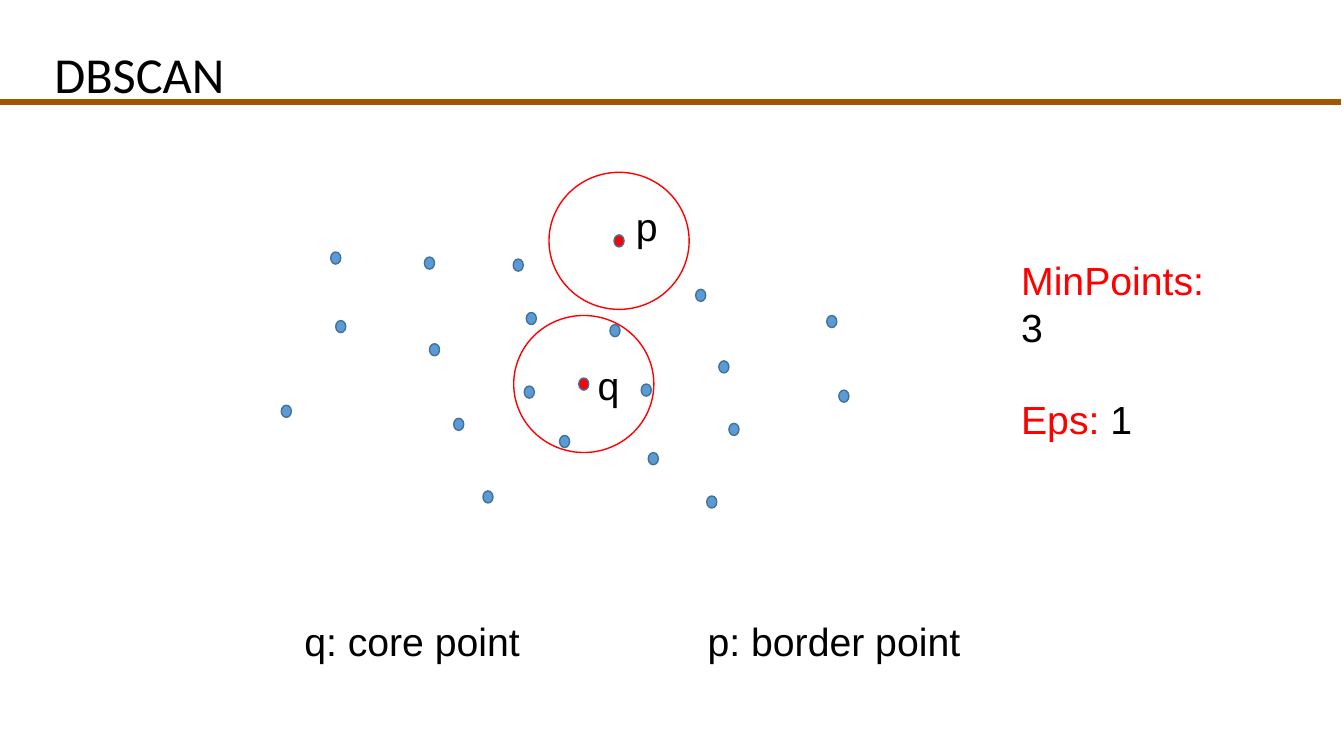
from pptx import Presentation
from pptx.dml.color import RGBColor
from pptx.enum.shapes import MSO_CONNECTOR as Link, MSO_SHAPE as Shape
from pptx.enum.text import MSO_ANCHOR as Anchor
from pptx.util import Inches, Pt
from lxml.etree import SubElement
from pptx.oxml.ns import qn


class Theme:
    ink, red, blue, edge, brown = "000000", "FF0000", "5B9BD5", "42719B", "9F5900"
    head_font, body_font = "Calibri", "Arial"
    head_size, body_size, gap = 36, 28, 32
    thin, thick = 1, 4.5


# Left and top of each point
POINTS = [
    (4.79, 4.87), (5.55, 4.32), (4.26, 3.41), (6.9, 2.87), (5.09, 2.57),
    (3.33, 3.18), (6.36, 3.81), (7.01, 4.92), (7.23, 4.2), (6.43, 4.49),
    (5.2, 3.83), (7.13, 3.58), (8.32, 3.87), (8.2, 3.13), (4.21, 2.55),
    (6.05, 3.22), (2.79, 4.02), (4.5, 4.15), (5.22, 3.1), (3.28, 2.5),
]
# Name, left and top of the point, left and top of its label
CENTERS = [("q", (5.74, 3.75), (5.83, 3.54)), ("p", (6.09, 2.33), (6.21, 1.96))]
DOT = (0.1, 0.12)
RING = (1.39, 1.36)

TITLE = [[("DBSCAN", Theme.ink)]]
PARAMS = [
    [("MinPoints: ", Theme.red), ("3", Theme.ink)],
    [("Eps: ", Theme.red), ("1", Theme.ink)],
]
LEGEND = [[("q: core point \tp: border point", Theme.ink)]]
LEGEND_TAB = 4


def color(code):
    return RGBColor.from_string(code)


def oval(slide, spot, size, line, fill=None):
    shape = slide.shapes.add_shape(Shape.FLOWCHART_CONNECTOR,
                                   *map(Inches, spot + size))
    shape.shadow.inherit = False
    if fill:
        shape.fill.solid()
        shape.fill.fore_color.rgb = color(fill)
    else:
        shape.fill.background()
    shape.line.color.rgb = color(line)
    shape.line.width = Pt(Theme.thin)


def text(slide, box, lines, font=Theme.body_font, size=Theme.body_size,
         pad=0.05, anchor=Anchor.TOP):
    frame = slide.shapes.add_textbox(*map(Inches, box)).text_frame
    frame.word_wrap = True
    frame.vertical_anchor = anchor
    frame.margin_left = frame.margin_right = Inches(0.1)
    frame.margin_top = frame.margin_bottom = Inches(pad)
    for i, runs in enumerate(lines):
        para = frame.add_paragraph() if i else frame.paragraphs[0]
        if i:
            para.space_before = Pt(Theme.gap)
        for words, ink in runs:
            run = para.add_run()
            run.text = words
            run.font.name = font
            run.font.size = Pt(size)
            run.font.color.rgb = color(ink)
    return frame


def set_tab(para, place):
    tabs = SubElement(para._p.get_or_add_pPr(), qn("a:tabLst"))
    SubElement(tabs, qn("a:tab"), pos=str(Inches(place)), algn="l")


def rule(slide, left, right, top):
    line = slide.shapes.add_connector(
        Link.STRAIGHT, *map(Inches, (left, top, right, top)))
    line.line.color.rgb = color(Theme.brown)
    line.line.width = Pt(Theme.thick)
    SubElement(line._element.spPr, qn("a:effectLst"))


def main():
    deck = Presentation()
    deck.slide_width, deck.slide_height = Inches(13.33), Inches(7.5)
    slide = deck.slides.add_slide(deck.slide_layouts[6])

    for spot in POINTS:
        oval(slide, spot, DOT, Theme.edge, Theme.blue)
    for name, spot, label in CENTERS:
        oval(slide, spot, DOT, Theme.edge, Theme.red)
        text(slide, label + (0.54, 0.57), [[(name, Theme.ink)]])
        ring = tuple(at + (dot - full) / 2
                     for at, dot, full in zip(spot, DOT, RING))
        oval(slide, ring, RING, Theme.red)

    text(slide, (10.03, 2.49, 2.27, 1.51), PARAMS)
    legend = text(slide, (2.92, 6.08, 7.11, 0.57), LEGEND)
    set_tab(legend.paragraphs[0], LEGEND_TAB)
    text(slide, (0.44, 0.3, 12.42, 0.83), TITLE, Theme.head_font,
         Theme.head_size, 0.1, Anchor.BOTTOM)
    rule(slide, 0, 13.3, 1.01)
    deck.save("out.pptx")


if __name__ == "__main__":
    main()
